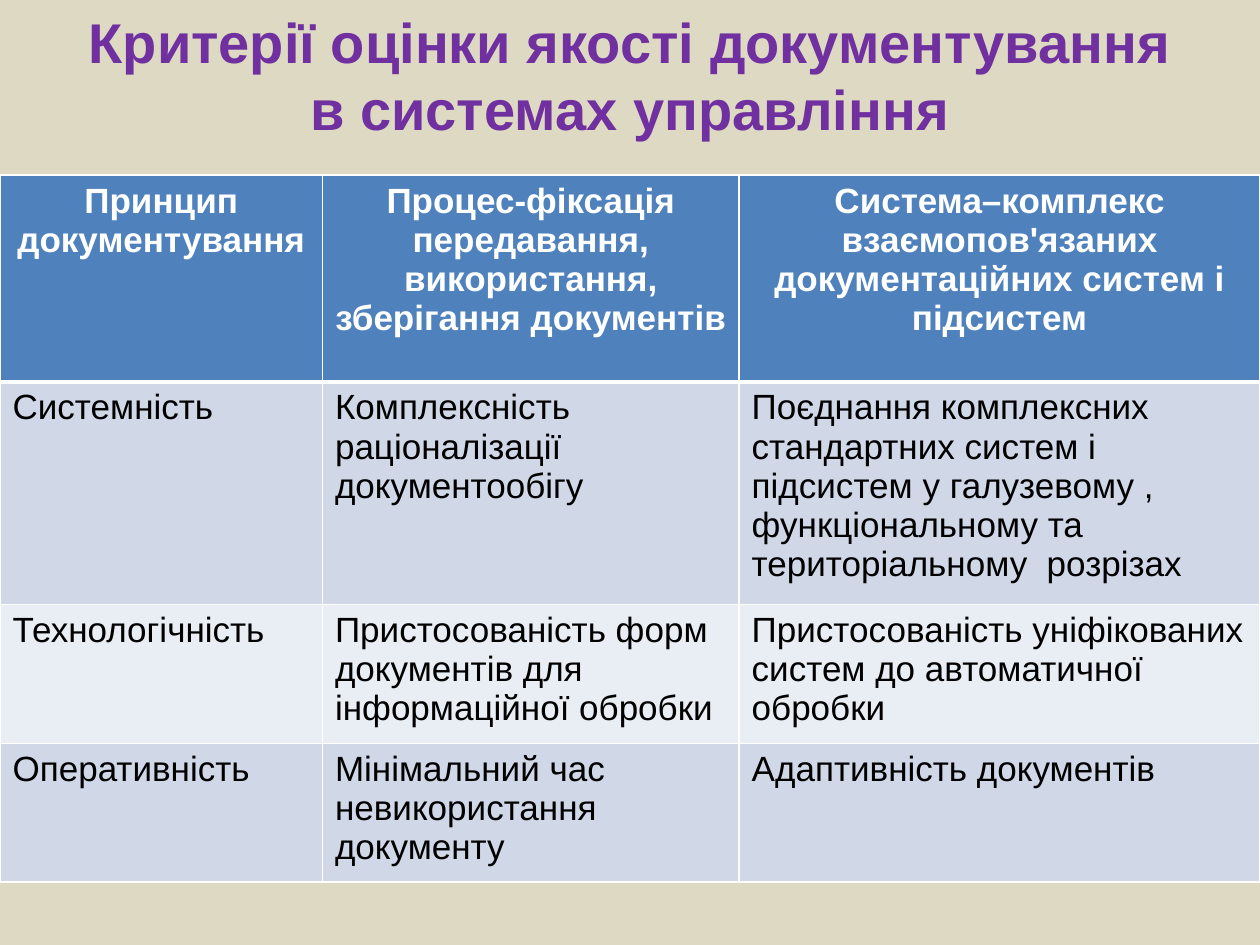
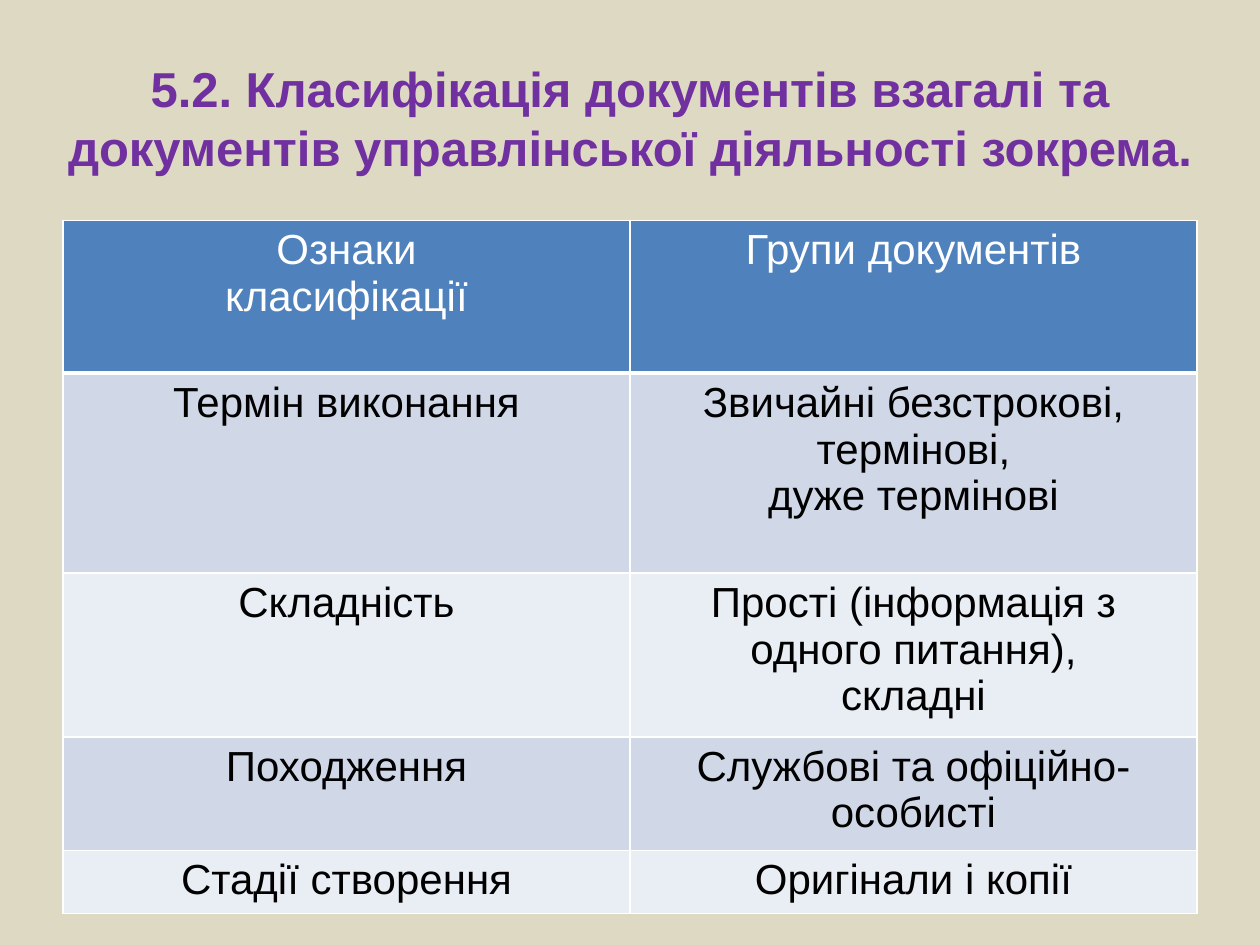
from lxml.etree import SubElement
from pptx import Presentation
from pptx.dml.color import RGBColor
from pptx.enum.text import MSO_ANCHOR, PP_ALIGN
from pptx.oxml.ns import qn
from pptx.util import Cm, Pt

BACKGROUND = "DDD9C3"
TITLE_COLOR = "7030A0"
HEADER_FILL = "4F81BD"
BAND_FILLS = ["E9EDF4", "D0D8E8"]
WHITE = "FFFFFF"
BLACK = "000000"


def color(hex_string):
    return RGBColor.from_string(hex_string)


def write(text_frame, text, alignment, font_color, **font_format):
    """Write one paragraph per line of text; a vertical tab breaks a line."""
    text_frame.word_wrap = True
    text_frame.text = text
    for paragraph in text_frame.paragraphs:
        paragraph.alignment = alignment
        paragraph.font.color.rgb = color(font_color)
        for run in paragraph.runs:
            run.font.color.rgb = color(font_color)
            for name, value in {"name": "Arial", **font_format}.items():
                setattr(run.font, name, value)


slides = [
    {
        "title": "Критерії оцінки якості документування\vв системах управління",
        "title_box": (0.6, 0, 24.2, 3),
        "title_size": 32,
        "table_corner": (0, 3.53),
        "columns": [6.5, 8.4, 10.5],
        "row_heights": [4.17, 4.19, 2.62, 2.62],
        "text_size": 20,
        "header_bold": True,
        "body_alignment": PP_ALIGN.LEFT,
        "rows": [
            ["Принцип документування",
             "Процес-фіксація передавання, використання, зберігання документів",
             "Система–комплекс взаємопов'язаних документаційних систем і підсистем"],
            ["Системність",
             "Комплексність раціоналізації документообігу",
             "Поєднання комплексних стандартних систем і підсистем у галузевому , "
             "функціональному та територіальному  розрізах"],
            ["Технологічність",
             "Пристосованість форм документів для інформаційної обробки",
             "Пристосованість уніфікованих систем до автоматичної обробки"],
            ["Оперативність",
             "Мінімальний час невикористання документу",
             "Адаптивність документів"],
        ],
    },
    {
        "title": "5.2. Класифікація документів взагалі та "
                 "документів управлінської діяльності зокрема.",
        "title_box": (0, 0.77, 25.4, 3.18),
        "title_size": 28,
        "table_corner": (1.27, 4.44),
        "columns": [11.43, 11.43],
        "row_heights": [3.08, 4.03, 3.08, 2.16, 1.21],
        "text_size": 24,
        "header_bold": False,
        "body_alignment": PP_ALIGN.CENTER,
        "rows": [
            ["Ознаки\nкласифікації", "Групи документів"],
            ["Термін виконання", "Звичайні безстрокові, термінові,\nдуже термінові"],
            ["Складність", "Прості (інформація з одного питання),\nскладні"],
            ["Походження", "Службові та офіційно-особисті"],
            ["Стадії створення", "Оригінали і копії"],
        ],
    },
]

presentation = Presentation()
presentation.slide_width = Cm(25.4)
presentation.slide_height = Cm(19.05)

for content in slides:
    slide = presentation.slides.add_slide(presentation.slide_layouts[6])
    slide.background.fill.solid()
    slide.background.fill.fore_color.rgb = color(BACKGROUND)

    title = slide.shapes.add_textbox(*map(Cm, content["title_box"]))
    title.text_frame.vertical_anchor = MSO_ANCHOR.MIDDLE
    write(title.text_frame, content["title"], PP_ALIGN.CENTER, TITLE_COLOR,
          size=Pt(content["title_size"]), bold=True)

    rows, columns, heights = content["rows"], content["columns"], content["row_heights"]
    left, top = content["table_corner"]
    table = slide.shapes.add_table(len(rows), len(columns), Cm(left), Cm(top),
                                   Cm(sum(columns)), Cm(sum(heights))).table
    for column, width in zip(table.columns, columns):
        column.width = Cm(width)
    for row, height in zip(table.rows, heights):
        row.height = Cm(height)

    for row_index, row_texts in enumerate(rows):
        is_header = row_index == 0
        border_widths = {"a:lnL": 1, "a:lnR": 1,
                         "a:lnT": 3 if row_index == 1 else 1,
                         "a:lnB": 3 if is_header else 1}
        for column_index, text in enumerate(row_texts):
            cell = table.cell(row_index, column_index)
            write(cell.text_frame, text,
                  PP_ALIGN.CENTER if is_header else content["body_alignment"],
                  WHITE if is_header else BLACK,
                  size=Pt(content["text_size"]),
                  bold=is_header and content["header_bold"])
            properties = cell._tc.get_or_add_tcPr()
            for tag, width in border_widths.items():
                line = SubElement(properties, qn(tag), w=str(Pt(width)))
                line_fill = SubElement(line, qn("a:solidFill"))
                SubElement(line_fill, qn("a:srgbClr"), val=WHITE)
            cell.fill.solid()
            cell.fill.fore_color.rgb = color(
                HEADER_FILL if is_header else BAND_FILLS[row_index % 2])

presentation.save("out.pptx")
